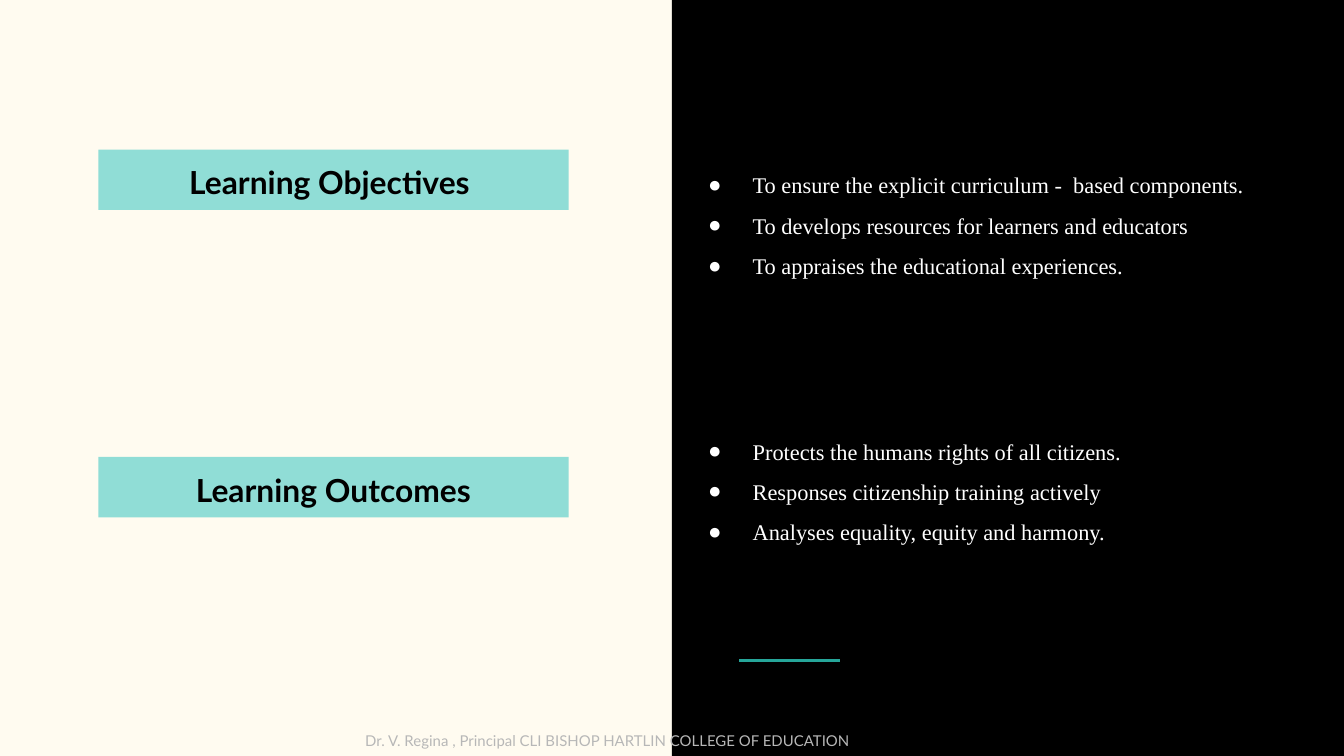
import pptx
import pptx.util
import pptx.dml.color
import pptx.enum.shapes
import pptx.enum.text
import pptx.oxml
import pptx.oxml.ns

RGBColor = pptx.dml.color.RGBColor
CREAM = RGBColor(0xFF, 0xFB, 0xF0)
BLACK = RGBColor(0x00, 0x00, 0x00)
WHITE = RGBColor(0xFF, 0xFF, 0xFF)
MINT = RGBColor(0x90, 0xDD, 0xD6)
TEAL = RGBColor(0x26, 0xA6, 0x9A)
GREY = RGBColor(0xB7, 0xB7, 0xB7)
HEADING_FONT = "Lato"
LIST_FONT = "Times New Roman"

WIDTH, HEIGHT = 1600, 900
HALF = WIDTH // 2
INSET = 16

# heading, heading top, list items, list top, list height
SECTIONS = [
    ("Learning Objectives ", 178,
     ["To ensure the explicit curriculum -  based components.",
      "To develops resources for learners and educators",
      "To appraises the educational experiences."], 172, 210),
    ("Learning Outcomes", 544,
     ["Protects the humans rights of all citizens.",
      "Responses citizenship training actively",
      "Analyses equality, equity and harmony."], 489, 262),
]
FOOTER = "Dr. V. Regina , Principal CLI BISHOP HARTLIN COLLEGE OF EDUCATION"


def px(n):
    """Convert px, 160 to the inch, to EMU."""
    return pptx.util.Emu(n * 5715)


def place(sp, x, y, w, h):
    sp.left, sp.top, sp.width, sp.height = px(x), px(y), px(w), px(h)


def write(sp, lines, font, size, color, bold=False, align=None, spacing=1.0):
    tf = sp.text_frame
    tf.text = "\n".join(lines)
    tf.word_wrap = True
    tf.auto_size = pptx.enum.text.MSO_AUTO_SIZE.NONE
    tf.vertical_anchor = pptx.enum.text.MSO_ANCHOR.TOP
    tf.margin_left = tf.margin_right = px(INSET)
    tf.margin_top = tf.margin_bottom = px(INSET)
    for p in tf.paragraphs:
        p.alignment = align
        p.line_spacing = spacing
        p.space_before = p.space_after = pptx.util.Pt(0)
        for r in p.runs:
            r.font.name = font
            r.font.size = pptx.util.Pt(size)
            r.font.bold = bold
            r.font.color.rgb = color


def add_bullet(p, color):
    pPr = p._p.get_or_add_pPr()
    pPr.set("marL", str(px(80)))
    pPr.set("indent", str(px(-53)))
    ns = pptx.oxml.ns.nsdecls("a")
    for xml in (f'<a:buClr {ns}><a:srgbClr val="{color}"/></a:buClr>',
                f'<a:buFont {ns} typeface="{LIST_FONT}"/>',
                f'<a:buChar {ns} char="●"/>'):
        pPr.append(pptx.oxml.parse_xml(xml))


def draw_panel(slide, x, y, w, h):
    """Dark panel behind the lists, with a short accent rule near its foot."""
    shapes = slide.shapes
    panel = shapes.add_shape(pptx.enum.shapes.MSO_SHAPE.RECTANGLE,
                             px(x), px(y), px(w), px(h))
    panel.shadow.inherit = False
    panel.fill.solid()
    panel.fill.fore_color.rgb = BLACK
    panel.line.fill.background()

    rule_y = px(y + h - 114)
    rule = shapes.add_connector(pptx.enum.shapes.MSO_CONNECTOR.STRAIGHT,
                                px(x + 80), rule_y, px(x + 200), rule_y)
    rule.line.color.rgb = TEAL
    rule.line.width = pptx.util.Pt(1.5)
    rule._element.spPr.append(pptx.oxml.parse_xml(
        f'<a:effectLst {pptx.oxml.ns.nsdecls("a")}/>'))

    # Behind the placeholders, which the layout creates first
    for sp in (rule, panel):
        shapes._spTree.insert(2, sp._element)


def fill_heading(sp, text, x, y, w, h):
    place(sp, x, y, w, h)
    sp.fill.solid()
    sp.fill.fore_color.rgb = MINT
    write(sp, [text], HEADING_FONT, 17, BLACK, bold=True,
          align=pptx.enum.text.PP_ALIGN.CENTER)


def fill_list(sp, items, x, y, w, h):
    place(sp, x, y, w, h)
    write(sp, items, LIST_FONT, 12, WHITE, spacing=1.5)
    for p in sp.text_frame.paragraphs:
        add_bullet(p, WHITE)


def draw_footer(slide, x, y, w, h):
    sp = slide.shapes.add_textbox(px(x), px(y), px(w), px(h))
    write(sp, [FOOTER], HEADING_FONT, 8, GREY)


def main():
    prs = pptx.Presentation()
    prs.slide_width, prs.slide_height = px(WIDTH), px(HEIGHT)
    slide = prs.slides.add_slide(prs.slide_layouts.get_by_name("Comparison"))
    slide.background.fill.solid()
    slide.background.fill.fore_color.rgb = CREAM

    title, *bodies = slide.placeholders
    title._element.getparent().remove(title._element)

    draw_panel(slide, HALF, 0, HALF, HEIGHT)
    pairs = zip(bodies[::2], bodies[1::2], SECTIONS)
    for heading_sp, list_sp, (heading, top, items, list_top, list_h) in pairs:
        fill_heading(heading_sp, heading, 117, top, 560, 72)
        fill_list(list_sp, items, HALF, list_top, HALF, list_h)
    draw_footer(slide, 419, 855, 872, 45)

    prs.save("out.pptx")


if __name__ == "__main__":
    main()
